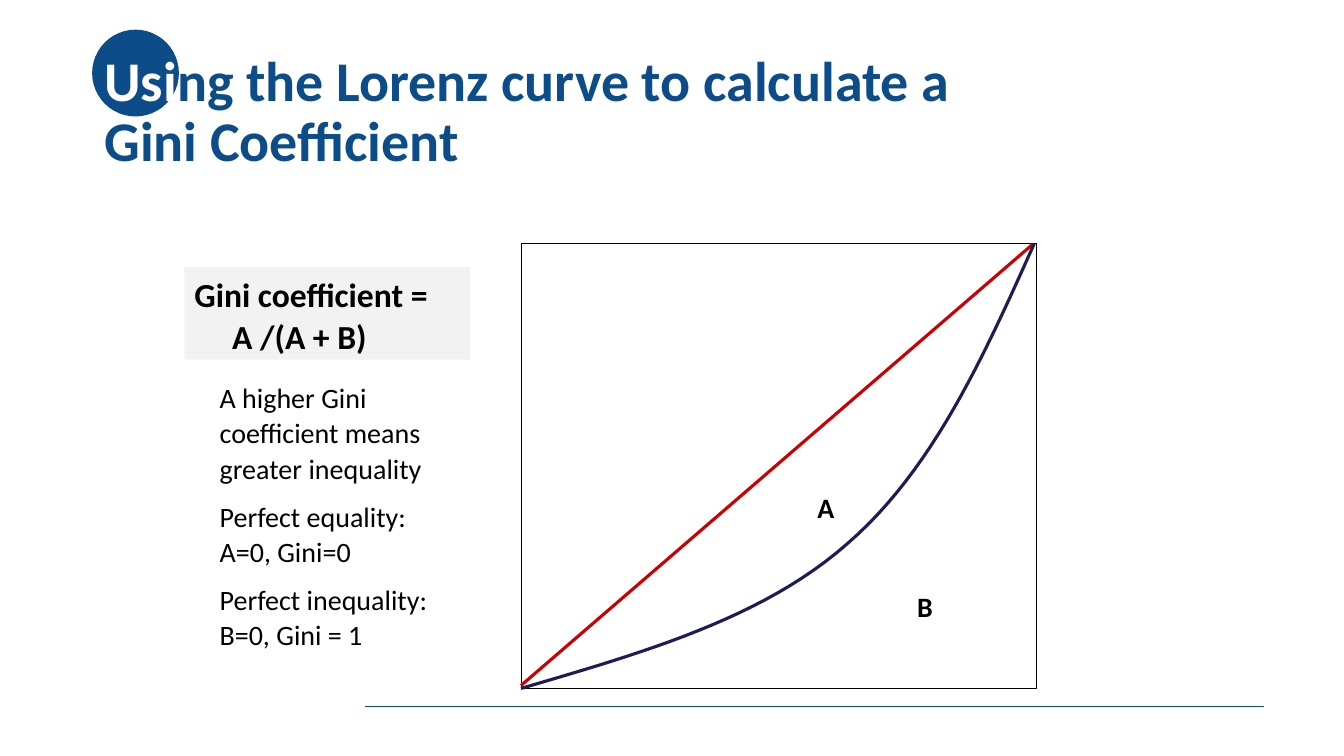
from lxml import etree
from pptx import Presentation
from pptx.dml.color import RGBColor
from pptx.enum.shapes import MSO_CONNECTOR, MSO_SHAPE
from pptx.enum.text import MSO_ANCHOR, MSO_AUTO_SIZE, PP_ALIGN
from pptx.oxml.ns import qn
from pptx.util import Pt

STRAIGHT = MSO_CONNECTOR.STRAIGHT
RECTANGLE, OVAL = MSO_SHAPE.RECTANGLE, MSO_SHAPE.OVAL
LEFT, TOP, MIDDLE = PP_ALIGN.LEFT, MSO_ANCHOR.TOP, MSO_ANCHOR.MIDDLE
NO_FIT = MSO_AUTO_SIZE.NONE

FONT = "Calibri"
BLUE = RGBColor(0x0C, 0x4C, 0x88)
NAVY = RGBColor(0x1C, 0x1C, 0x56)
RED = RGBColor(0xCC, 0x00, 0x00)
GREY = RGBColor(0xF2, 0xF2, 0xF2)
WHITE = RGBColor(0xFF, 0xFF, 0xFF)
BLACK = RGBColor(0, 0, 0)

HEADING = [("Usi", WHITE),
           ("ng the Lorenz curve to calculate a Gini Coefficient", BLUE)]
FORMULA = ["Gini coefficient =", "A /(A + B)"]
NOTES = ["A higher Gini coefficient means greater inequality",
         "Perfect equality: A=0, Gini=0",
         "Perfect inequality: B=0, Gini = 1"]
AREA_LABELS = [("A", 576.7, 347), ("B", 648, 417.6)]

PLOT_BOX = (372.2, 174.2, 368, 317.5)
EQUALITY_LINE = (738, 174.2, 372.2, 489.6)
LORENZ_BEZIERS = [
    [(372.2, 491.8), (457.9, 466.6), (544.3, 442.1), (604.8, 388.8)],
    [(604.8, 388.8), (666, 336.2), (702.7, 254.9), (738.7, 174.2)],
]
STEPS = 24

deck = Presentation()
deck.slide_width, deck.slide_height = Pt(960), Pt(540)
slide = deck.slides.add_slide(deck.slide_layouts[5])
shapes = slide.shapes


def points(*values):
    return [Pt(value) for value in values]


def add_run(paragraph, text, size, color, bold):
    run = paragraph.add_run()
    run.text = text
    run.font.name, run.font.size, run.font.bold = FONT, Pt(size), bold
    run.font.color.rgb = color


def add_line(start_x, start_y, end_x, end_y, color, width):
    line = shapes.add_connector(STRAIGHT, *points(start_x, start_y, end_x, end_y))
    line.line.color.rgb, line.line.width = color, Pt(width)
    etree.SubElement(line._element.spPr, qn("a:effectLst"))


def add_plain_shape(preset, box, fill=None):
    shape = shapes.add_shape(preset, *points(*box))
    shape.shadow.inherit = False
    shape.line.fill.background()
    if fill is None:
        shape.fill.background()
    else:
        shape.fill.solid()
        shape.fill.fore_color.rgb = fill
    return shape


def bezier_point(controls, t):
    weights = ((1 - t) ** 3, 3 * t * (1 - t) ** 2, 3 * t ** 2 * (1 - t), t ** 3)
    return tuple(Pt(sum(w * c[axis] for w, c in zip(weights, controls)))
                 for axis in (0, 1))


add_line(260.6, 504.7, 902.9, 504.7, BLUE, 0.5)
add_plain_shape(OVAL, (65.8, 21.2, 62, 62), BLUE)

title = shapes.title
shapes._spTree.append(title._element)
title.left, title.top, title.width, title.height = points(67.4, 33.1, 648, 95.8)
title.text_frame.auto_size = NO_FIT
title.text_frame.vertical_anchor = MIDDLE
heading = title.text_frame.paragraphs[0]
heading.alignment, heading.line_spacing = LEFT, 0.9
for text, color in HEADING:
    add_run(heading, text, 40, color, True)

plot = add_plain_shape(RECTANGLE, PLOT_BOX)
plot.line.color.rgb, plot.line.width = BLACK, Pt(0.75)
add_line(*EQUALITY_LINE, RED, 2.25)

builder = shapes.build_freeform(*points(*LORENZ_BEZIERS[0][0]))
builder.add_line_segments(
    [bezier_point(controls, step / STEPS)
     for controls in LORENZ_BEZIERS for step in range(1, STEPS + 1)],
    close=False)
lorenz = builder.convert_to_shape()
lorenz.shadow.inherit = False
lorenz.fill.background()
lorenz.line.color.rgb, lorenz.line.width = NAVY, Pt(2.25)

for label, left, top in AREA_LABELS:
    area = shapes.add_textbox(*points(left, top, 26.6, 31.7))
    area.text_frame.word_wrap = False
    add_run(area.text_frame.paragraphs[0], label, 20, BLACK, True)

formula_box = add_plain_shape(RECTANGLE, (131.8, 190.8, 203.8, 66.2), GREY)
formula_box.text_frame.word_wrap = True
formula_box.text_frame.vertical_anchor = TOP
formula = formula_box.text_frame.paragraphs[0]
formula.alignment, formula.line_spacing = LEFT, 1.05
formula._p.get_or_add_pPr().set("marL", str(Pt(27)))
formula._p.get_or_add_pPr().set("indent", str(Pt(-27)))
for index, text in enumerate(FORMULA):
    if index:
        formula.add_line_break()
    add_run(formula, text, 24, BLACK, True)

notes = shapes.add_textbox(*points(149.8, 267.1, 186.5, 225.4)).text_frame
notes.word_wrap = True
for index, text in enumerate(NOTES):
    note = notes.add_paragraph() if index else notes.paragraphs[0]
    note.line_spacing = 1.05
    if index:
        note.space_before = Pt(9)
    add_run(note, text, 20, BLACK, False)

deck.save("out.pptx")
